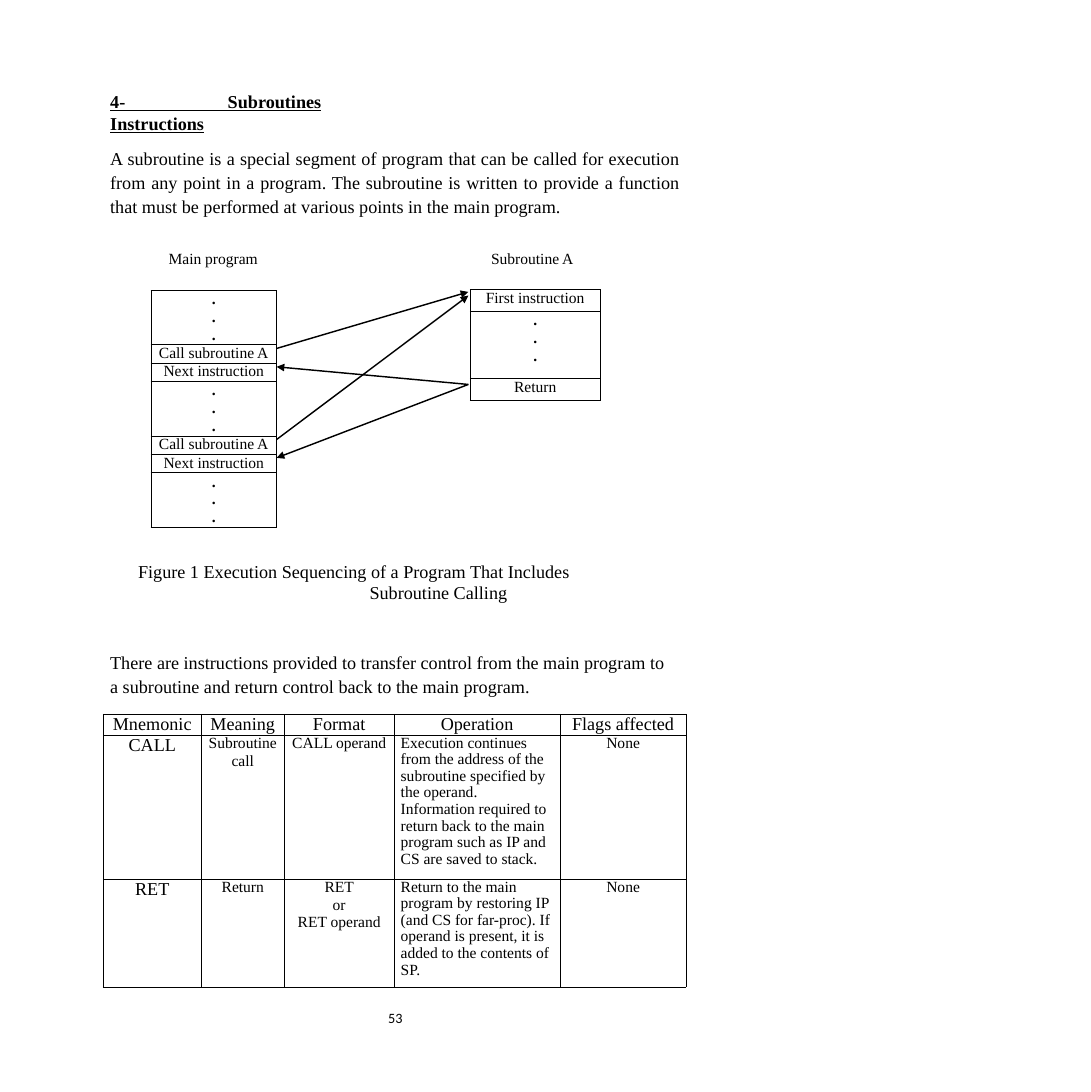
from pptx import Presentation, util as u
from pptx.dml.color import RGBColor
from pptx.enum import shapes, text
from pptx.oxml import parse_xml
from pptx.oxml.ns import nsdecls

Cm, Pt = u.Cm, u.Pt
LEFT, MID, JUST = text.PP_ALIGN.LEFT, text.PP_ALIGN.CENTER, text.PP_ALIGN.JUSTIFY
SERIF = "Times New Roman"
BLACK = "000000"
DOTS = ".\n.\n."


def color(code):
    return RGBColor.from_string(code)


def style(frame, size, align=LEFT, bold=False, face=SERIF, lead=None):
    for par in frame.paragraphs:
        par.alignment = align
        if lead:
            par.line_spacing = lead
        font = par.font
        font.name, font.size, font.bold = face, Pt(size), bold
        font.color.rgb = color(BLACK)


def fit(frame):
    frame.margin_left = frame.margin_right = 0
    frame.margin_top = frame.margin_bottom = 0
    frame.word_wrap = True
    frame.auto_size = text.MSO_AUTO_SIZE.NONE
    frame.vertical_anchor = text.MSO_ANCHOR.TOP


def write(slide, box, words, size, **look):
    frame = slide.shapes.add_textbox(*map(Cm, box)).text_frame
    fit(frame)
    frame.text = words
    style(frame, size, **look)
    return frame


def edge(cell):
    """Draw a thin black border round a clear cell."""
    cell.fill.background()
    props = cell._tc.get_or_add_tcPr()
    for i, side in enumerate("LRTB"):
        props.insert(i, parse_xml(
            f'<a:ln{side} {nsdecls("a")} w="7366"><a:solidFill>'
            f'<a:srgbClr val="{BLACK}"/></a:solidFill></a:ln{side}>'))


def grid(slide, left, top, cols, rows, cells, look):
    """Add a ruled table; look(row, col, words) gives each cell's style."""
    frame = slide.shapes.add_table(
        len(rows), len(cols), Cm(left), Cm(top), Cm(sum(cols)), Cm(sum(rows)))
    table = frame.table
    table.first_row = table.horz_banding = False
    for col, width in zip(table.columns, cols):
        col.width = Cm(width)
    for row, height in zip(table.rows, rows):
        row.height = Cm(height)
    for r, line in enumerate(cells):
        for c, words in enumerate(line):
            cell = table.cell(r, c)
            cell.margin_left = cell.margin_right = 0
            cell.margin_top = cell.margin_bottom = 0
            cell.text = words
            form = look(r, c, words)
            if form.get("align") == LEFT:
                cell.margin_left = Cm(0.18)
            style(cell.text_frame, **form)
            edge(cell)


def arrow(slide, start, end):
    line = slide.shapes.add_connector(
        shapes.MSO_CONNECTOR.STRAIGHT, *map(Cm, start + end))
    line.line.color.rgb = color(BLACK)
    line.line.width = Pt(1.1)
    line.line._get_or_add_ln().append(parse_xml(
        f'<a:tailEnd {nsdecls("a")} type="triangle" w="med" len="med"/>'))
    line._element.spPr.append(parse_xml(f'<a:effectLst {nsdecls("a")}/>'))


def intro(slide, left, top, width):
    # Heading, justified in a narrow box
    title = slide.shapes.title
    title.left, title.top = Cm(left), Cm(top)
    title.width, title.height = Cm(5.75), Cm(1.2)
    frame = title.text_frame
    frame.text = "4- Subroutines Instructions"
    fit(frame)
    style(frame, 14, JUST, bold=True)
    frame.paragraphs[0].font.underline = True
    # Definition; hard spaces hold "execution from" and "a function" together
    write(slide, (left, top + 1.49, width, 2),
          "A subroutine is a special segment of program that can be called for "
          "execution from any point in a program. The subroutine is written to "
          "provide a function that must be performed at various points in the "
          "main program.", 14, align=JUST, lead=1.1)


def figure(slide, left, top):
    def look(r, c, words):
        dots = words == DOTS
        return dict(size=12, align=MID, bold=dots,
                    lead=Pt(13.8) if dots else None)

    # Labels and the two programs
    call, follow = "Call subroutine A", "Next instruction"
    main = [DOTS, call, follow, DOTS, call, follow, DOTS]
    tall = [1.48 if words == DOTS else 0.5 for words in main]
    sub = ["First instruction", DOTS, "Return"]
    deep = [0.6, 1.82, 0.6]
    wide, far, head = 3.42, left + 8.69, top + 1.13
    write(slide, (left + 0.48, top, 3, 0.53), "Main program", 12)
    write(slide, (far + 0.57, top, 3, 0.53), "Subroutine A", 12)
    grid(slide, left, head, [wide], tall, [[m] for m in main], look)
    grid(slide, far, head - 0.03, [3.54], deep, [[s] for s in sub], look)

    # Calls go to the first instruction, returns to the next one
    near, tip = left + wide, far - 0.05
    calls = 0
    for r, words in enumerate(main):
        spot = (near, head + sum(tall[:r]) + 0.1)
        if words == call:
            arrow(slide, spot, (tip, head + 0.04 + 0.1 * calls))
            calls += 1
        elif words == follow:
            arrow(slide, (tip, head + sum(deep[:2]) + 0.14), spot)


def caption(slide, left, top):
    frame = write(slide, (left, top, 13, 1.2),
                  "Figure 1 Execution Sequencing of a Program That Includes "
                  "Subroutine Calling", 14, lead=Pt(16.1))
    props = frame.paragraphs[0]._p.get_or_add_pPr()
    props.set("marL", str(Cm(7.06)))
    props.set("indent", str(Cm(-6.3)))


def summary(slide, left, top):
    # Lead-in
    write(slide, (left + 0.19, top - 1.76, 15.4, 1.4),
          "There are instructions provided to transfer control from the main "
          "program to a subroutine and return control back to the main program.",
          14, lead=1.1)
    # Instruction table
    cells = [
        ["Mnemonic", "Meaning", "Format", "Operation", "Flags affected"],
        ["CALL", "Subroutine call", "CALL operand",
         "Execution continues from the address of the subroutine specified by "
         "the operand.\vInformation required to return back to the main program "
         "such as IP and CS are saved to stack.", "None"],
        ["RET", "Return", "RET\nor\nRET operand",
         "Return to the main program by restoring IP (and CS for far-proc). If "
         "operand is present, it is added to the contents of SP.", "None"],
    ]

    def look(r, c, words):
        if r and c == 3:
            return dict(size=12, align=LEFT, lead=0.96)
        return dict(size=14 if r == 0 or c == 0 else 12, align=MID)

    grid(slide, left, top, [2.67, 2.26, 2.99, 4.52, 3.43],
         [0.57, 3.92, 2.94], cells, look)


def main():
    deck = Presentation()
    deck.slide_width, deck.slide_height = Cm(29.7), Cm(29.74)
    slide = deck.slides.add_slide(deck.slide_layouts[5])
    intro(slide, 3, 2.46, 15.52)
    figure(slide, 4.11, 6.78)
    caption(slide, 3, 15.29)
    summary(slide, 2.81, 19.45)
    # Page number
    write(slide, (10.57, 27.5, 1, 0.5), "53", 11, face="Calibri")
    deck.save("out.pptx")


if __name__ == "__main__":
    main()
